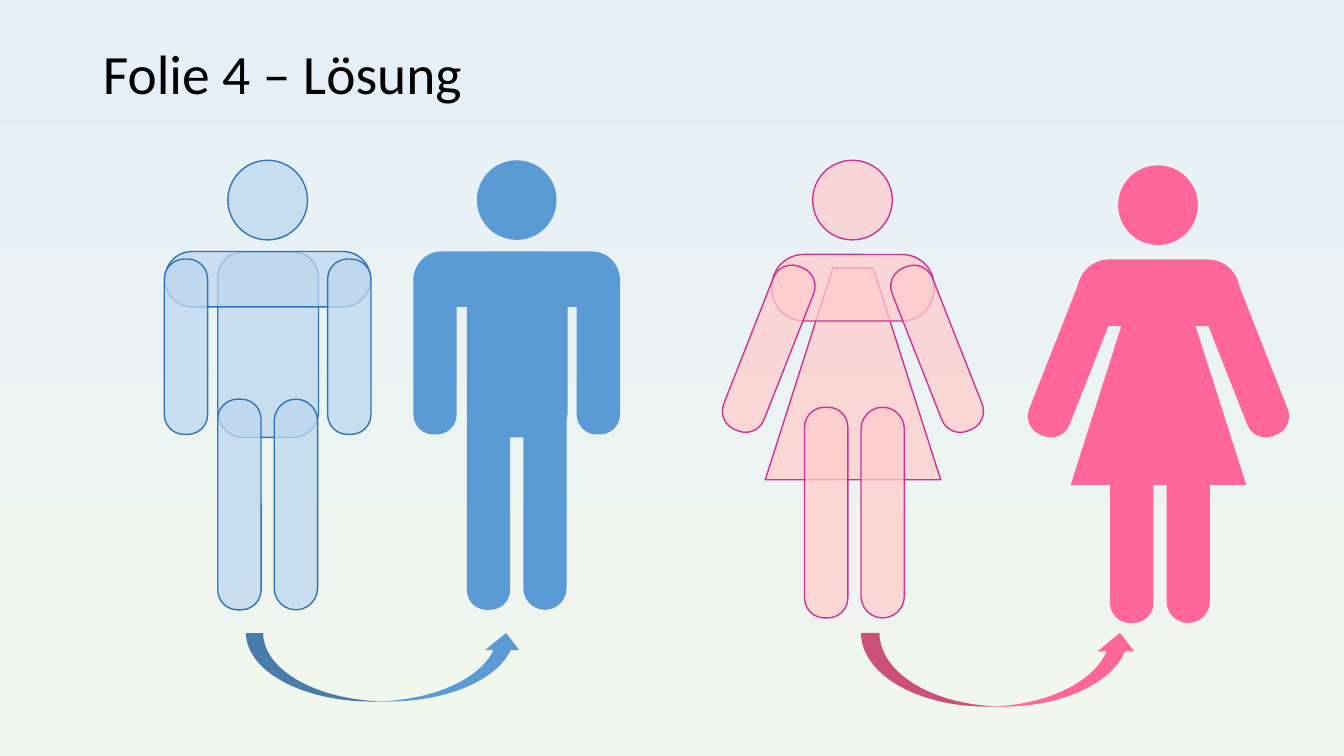
import pptx
import pptx.util
import pptx.dml.color
import pptx.enum.shapes
import pptx.enum.text
import pptx.oxml.ns
import lxml.etree

Inches = pptx.util.Inches
Pt = pptx.util.Pt
SHAPE = pptx.enum.shapes.MSO_SHAPE

# Each part: preset, left, top, width, height, adjustment, rotation
MAN = [
    (SHAPE.ROUNDED_RECTANGLE, 2.16, 2.5, 1, 1.84, 0.254, 0),
    (SHAPE.OVAL, 2.26, 1.59, 0.79, 0.79, None, 0),
    (SHAPE.ROUNDED_RECTANGLE, 2.38, 1.75, 0.55, 2.04, 0.495, 90),
    (SHAPE.ROUNDED_RECTANGLE, 2.72, 3.96, 0.43, 2.09, 0.5, 0),
    (SHAPE.ROUNDED_RECTANGLE, 2.16, 3.96, 0.43, 2.09, 0.457, 0),
    (SHAPE.ROUNDED_RECTANGLE, 1.63, 2.57, 0.43, 1.74, 0.457, 0),
    (SHAPE.ROUNDED_RECTANGLE, 3.25, 2.57, 0.43, 1.74, 0.457, 0),
]
WOMAN = [
    (SHAPE.TRAPEZOID, 7.59, 2.66, 1.74, 2.1, 0.385, 0),
    (SHAPE.ROUNDED_RECTANGLE, 8.13, 2.05, 0.66, 1.61, 0.479, 90),
    (SHAPE.OVAL, 8.06, 1.59, 0.79, 0.79, None, 0),
    (SHAPE.ROUNDED_RECTANGLE, 8.54, 4.04, 0.43, 2.09, 0.5, 0),
    (SHAPE.ROUNDED_RECTANGLE, 7.98, 4.04, 0.43, 2.09, 0.457, 0),
    (SHAPE.ROUNDED_RECTANGLE, 7.41, 2.59, 0.43, 1.74, 0.457, 21.5),
    (SHAPE.ROUNDED_RECTANGLE, 9.08, 2.59, 0.43, 1.74, 0.457, 338.5),
]


def rgb(color):
    return pptx.dml.color.RGBColor.from_string(color)


class Deck:
    font = "Calibri"
    title_size = 39.6
    opacity = 75

    def __init__(self):
        self.prs = pptx.Presentation()
        self.prs.slide_width = Inches(13.33)
        self.prs.slide_height = Inches(7.5)

    def slide(self, top_color, bottom_color):
        self.s = self.prs.slides.add_slide(self.prs.slide_layouts[5])
        fill = self.s.background.fill
        fill.gradient()
        fill.gradient_angle = 270
        for stop, color, position in zip(fill.gradient_stops, (top_color, bottom_color), (0, 1)):
            stop.color.rgb = rgb(color)
            stop.position = position

    def title(self, text, left, top, width, height):
        sp = self.s.shapes.title
        sp.left, sp.top, sp.width, sp.height = map(Inches, (left, top, width, height))
        tf = sp.text_frame
        tf.text = text
        tf.vertical_anchor = pptx.enum.text.MSO_ANCHOR.MIDDLE
        p = tf.paragraphs[0]
        p.alignment = pptx.enum.text.PP_ALIGN.LEFT
        p.line_spacing = 0.9
        font = p.runs[0].font
        font.name = self.font
        font.size = Pt(self.title_size)
        font.color.rgb = rgb("000000")

    def shape(self, shapes, preset, left, top, width, height, fill, line=None):
        """Add a solid shape, or a translucent one where a line colour is given."""
        sp = shapes.add_shape(preset, *map(Inches, (left, top, width, height)))
        sp.shadow.inherit = False
        sp.fill.solid()
        sp.fill.fore_color.rgb = rgb(fill)
        if line:
            sp.line.color.rgb = rgb(line)
            sp.line.width = Pt(1)
            qn = pptx.oxml.ns.qn
            color = sp.fill._xPr.find(qn("a:solidFill")).find(qn("a:srgbClr"))
            lxml.etree.SubElement(color, qn("a:alpha"), val=str(self.opacity * 1000))
        else:
            sp.line.fill.background()
        return sp

    def figure(self, parts, fill, line=None, dx=0, dy=0):
        """Build a figure from its parts; a solid one is grouped."""
        shapes = self.s.shapes if line else self.s.shapes.add_group_shape().shapes
        for preset, left, top, width, height, adjustment, rotation in parts:
            sp = self.shape(shapes, preset, left + dx, top + dy, width, height, fill, line)
            sp.rotation = rotation
            if adjustment is not None:
                sp.adjustments[0] = adjustment

    def arrow(self, left, top, width, height, fill):
        self.shape(self.s.shapes, SHAPE.CURVED_UP_ARROW, left, top, width, height, fill)


def main():
    deck = Deck()
    deck.slide("E5EFF8", "F1F7EC")
    deck.title("Folie 4 – Lösung", 0.92, 0.4, 11.5, 0.72)
    deck.figure(MAN, "BDD7EE", "2E75B6")
    deck.figure(WOMAN, "FFCCCC", "CC3399")
    deck.figure(MAN, "5B9BD5", dx=2.47)
    deck.figure(WOMAN, "FF6699", dx=3.03, dy=0.05)
    deck.arrow(2.44, 6.28, 2.75, 0.68, "5B9BD5")
    deck.arrow(8.54, 6.28, 2.75, 0.73, "FF6699")
    deck.prs.save("out.pptx")


if __name__ == "__main__":
    main()
